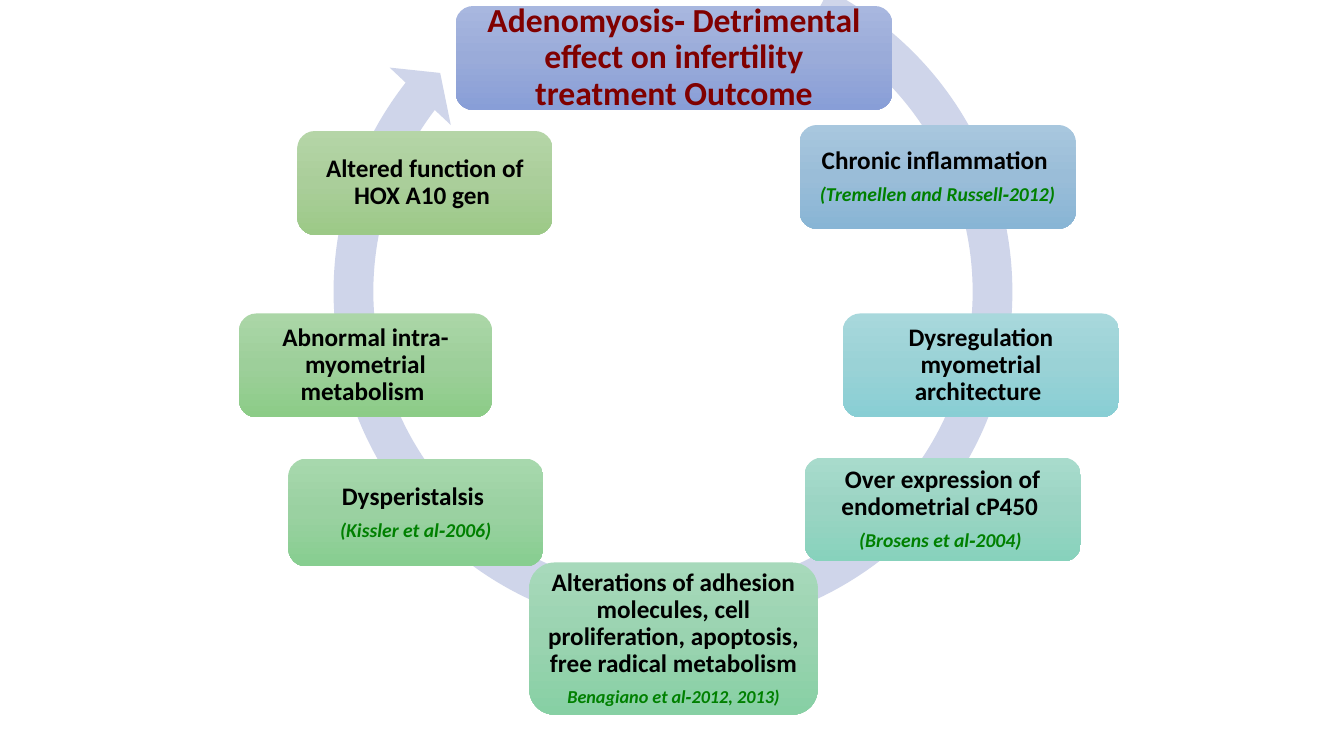
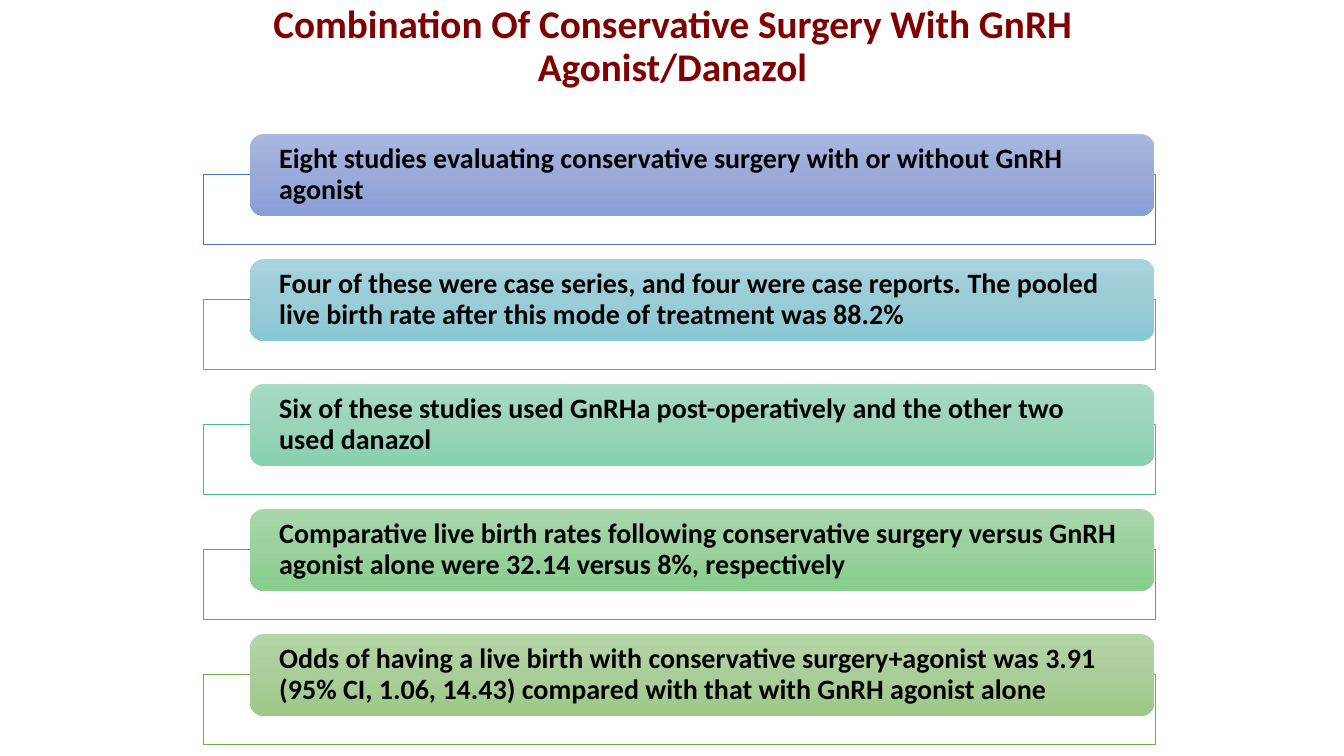
import copy

import pptx
import pptx.dml.color
import pptx.enum.shapes
import pptx.enum.text
import pptx.util

RGB = pptx.dml.color.RGBColor.from_string
Inches, Pt = pptx.util.Inches, pptx.util.Pt
SHAPE = pptx.enum.shapes.MSO_SHAPE
ALIGN = pptx.enum.text.PP_ALIGN
ANCHOR = pptx.enum.text.MSO_ANCHOR

FONT = "Calibri"
MAROON, BLACK, GREEN = RGB("800000"), RGB("000000"), RGB("008000")
WHITE, RING = RGB("FFFFFF"), RGB("CFD5EA")


def shades(*codes):
    """Top, middle and bottom colour of a gradient."""
    return [RGB(code) for code in codes]


PERIWINKLE = shades("A8B7DF", "9AABD9", "889ED7")
SKY = shades("A8C7DE", "9ABDD8", "88B5D5")
AQUA = shades("A8D8DC", "9AD2D6", "88CED4")
LAGOON = shades("A8D4DD", "9ACCD6", "88C8D4")
TEAL = shades("A8DBCC", "9AD4C3", "87D2BC")
JADE = shades("A8DAC3", "9AD4B9", "87D1AF")
MINT = shades("A7D9BB", "9AD3B0", "87D0A4")
FERN = shades("A7D8AD", "9AD1A1", "87CE90")
MEADOW = shades("A7D7AB", "9AD19E", "87CD8C")
LEAF = shades("ABD6A7", "9DCF9A", "8CCC87")
OLIVE = shades("B5D5A7", "AACE9A", "9CC987")

CYCLE_RING = (3.09, -0.69, 7.17, 7.17)
RING_ADJUSTMENTS = (0.055, 3.307, 130.632, 178.367, 0.058)
CYCLE_TITLE = "Adenomyosis‐ Detrimental effect on infertility treatment Outcome"
CYCLE_TITLE_BOX = (4.52, 0.06, 4.33, 1.03)

# Box, gradient, effect, citation, citation size
EFFECTS = [
    ((7.93, 1.24, 2.74, 1.03), SKY, "Chronic inflammation ",
     "(Tremellen and Russell‐2012)", 14),
    ((8.36, 3.11, 2.74, 1.03), AQUA,
     "Dysregulation myometrial architecture ", None, None),
    ((7.98, 4.54, 2.74, 1.03), TEAL, "Over expression of endometrial cP450 ",
     "(Brosens et al‐2004) ", 14),
    ((5.25, 5.58, 2.86, 1.51), MINT,
     "Alterations of adhesion molecules, cell proliferation, apoptosis, "
     "free radical metabolism", "Benagiano et al‐2012, 2013)", 13),
    ((2.86, 4.55, 2.53, 1.07), FERN, "Dysperistalsis ",
     "(Kissler et al‐2006)", 14),
    ((2.37, 3.11, 2.51, 1.03), LEAF,
     "Abnormal intra-myometrial metabolism ", None, None),
    ((2.95, 1.3, 2.53, 1.03), OLIVE,
     "Altered function of HOX A10 gen ", None, None),
]

SURGERY_TITLE = "Combination Of Conservative Surgery With GnRH Agonist/Danazol"
FINDINGS = [
    (PERIWINKLE, RGB("4472C4"),
     "Eight studies evaluating conservative surgery with or without GnRH "
     "agonist"),
    (LAGOON, RGB("43AFC0"),
     "Four of these were case series, and four were case reports. The pooled "
     "live birth rate after this mode of treatment was 88.2%"),
    (JADE, RGB("43BB8D"),
     "Six of these studies used GnRHa post-operatively and the other two "
     "used danazol"),
    (MEADOW, RGB("45B451"),
     "Comparative live birth rates following conservative surgery versus GnRH "
     "agonist alone were 32.14 versus 8%, respectively"),
    (OLIVE, RGB("70AD47"),
     "Odds of having a live birth with conservative surgery+agonist was 3.91 "
     "(95% CI, 1.06, 14.43) compared with that with GnRH agonist alone"),
]
FINDING_TOP, FINDING_PITCH, FRAME_DROP = 1.33, 1.24, 0.4


def add_plain(slide, kind, box):
    shape = slide.shapes.add_shape(kind, *map(Inches, box))
    shape.shadow.inherit = False
    shape.line.fill.background()
    return shape


def write(shape, lines, align, margins, anchor=ANCHOR.MIDDLE):
    """Fill a shape with (text, size, colour, italic) lines in bold."""
    frame = shape.text_frame
    frame.word_wrap = True
    frame.vertical_anchor = anchor
    across, down = map(Inches, margins)
    frame.margin_left = frame.margin_right = across
    frame.margin_top = frame.margin_bottom = down
    frame.text = "\n".join(line[0] for line in lines)
    for paragraph, (_, size, colour, italic) in zip(frame.paragraphs, lines):
        paragraph.alignment = align
        paragraph.line_spacing = 0.9
        font = paragraph.runs[0].font
        font.name, font.size = FONT, Pt(size)
        font.bold, font.italic = True, italic
        font.color.rgb = colour
    for paragraph in frame.paragraphs[:-1]:
        paragraph.space_after = Pt(7)


def add_card(slide, box, gradient, lines, align, margins):
    card = add_plain(slide, SHAPE.ROUNDED_RECTANGLE, box)
    card.fill.gradient()
    card.fill.gradient_angle = 270
    first = card.fill.gradient_stops[0]._gs
    first.addnext(copy.deepcopy(first))
    for stop, colour, position in zip(card.fill.gradient_stops, gradient,
                                      (0, 0.5, 1)):
        stop.color.rgb = colour
        stop.position = position
    write(card, lines, align, margins)


def build_cycle(slide):
    ring = add_plain(slide, SHAPE.CIRCULAR_ARROW, CYCLE_RING)
    for index, value in enumerate(RING_ADJUSTMENTS):
        ring.adjustments[index] = value
    ring.fill.solid()
    ring.fill.fore_color.rgb = RING
    add_card(slide, CYCLE_TITLE_BOX, PERIWINKLE,
             [(CYCLE_TITLE, 24, MAROON, False)], ALIGN.CENTER, (0.1, 0.1))
    for box, gradient, effect, citation, size in EFFECTS:
        lines = [(effect, 18, BLACK, False)]
        if citation:
            lines.append((citation, size, GREEN, True))
        add_card(slide, box, gradient, lines, ALIGN.CENTER, (0.07, 0.07))


def build_findings(slide):
    title = slide.shapes.add_textbox(*map(Inches, (2.17, 0, 9, 1.25)))
    write(title, [(SURGERY_TITLE, 28, MAROON, False)], ALIGN.CENTER,
          (0.1, 0.05), ANCHOR.TOP)
    for row, (gradient, outline, finding) in enumerate(FINDINGS):
        top = FINDING_TOP + row * FINDING_PITCH
        frame = add_plain(slide, SHAPE.RECTANGLE,
                          (2.02, top + FRAME_DROP, 9.44, 0.69))
        frame.fill.solid()
        frame.fill.fore_color.rgb = WHITE
        frame.line.color.rgb = outline
        frame.line.width = Pt(0.5)
        add_card(slide, (2.48, top, 8.97, 0.81), gradient,
                 [(finding, 20, BLACK, False)], ALIGN.LEFT, (0.25, 0))


def main():
    deck = pptx.Presentation()
    deck.slide_width, deck.slide_height = Inches(13.33), Inches(7.5)
    for build in (build_cycle, build_findings):
        build(deck.slides.add_slide(deck.slide_layouts[6]))
    deck.save("out.pptx")


if __name__ == "__main__":
    main()
